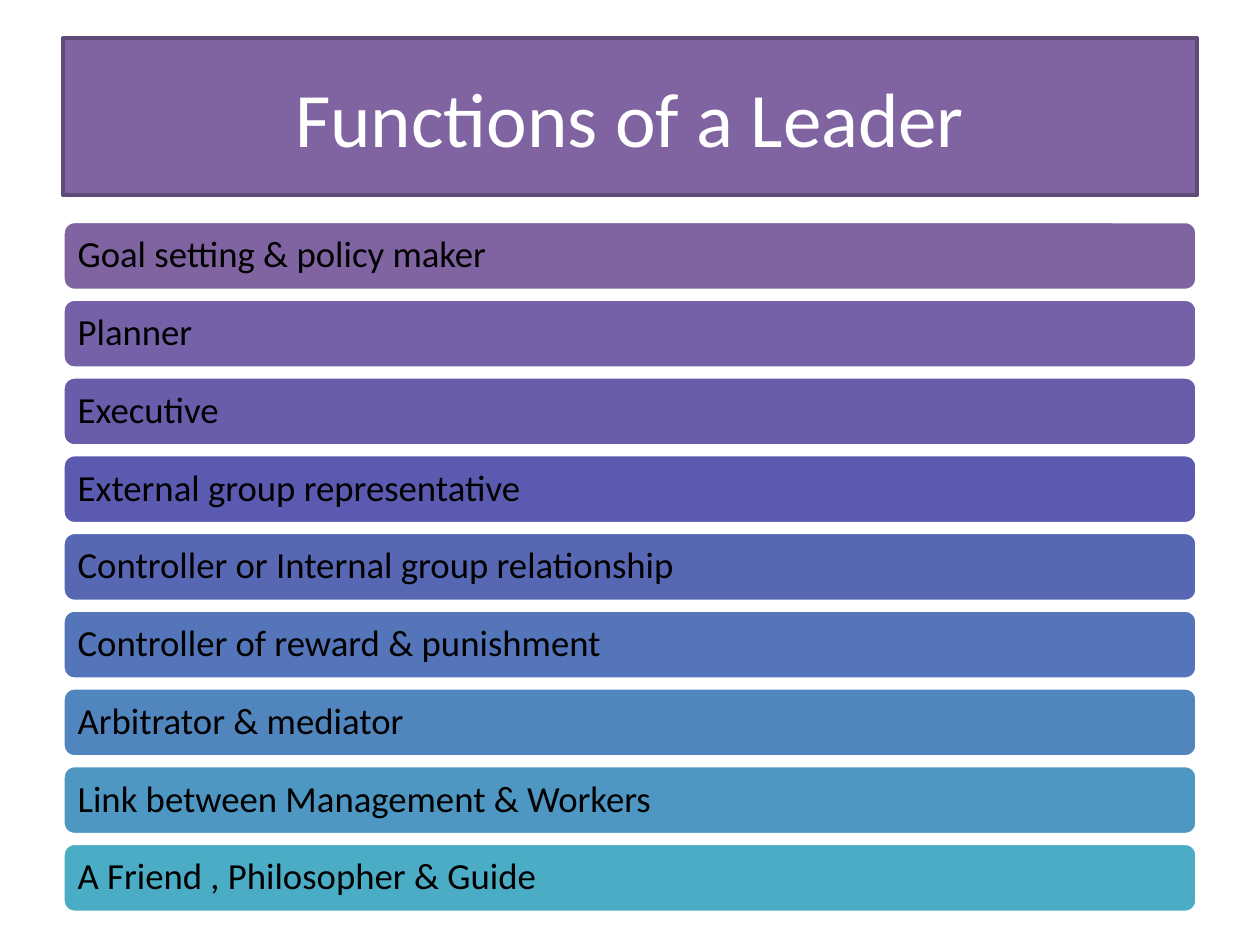
from pptx import Presentation
from pptx.dml.color import RGBColor
from pptx.enum.shapes import MSO_SHAPE
from pptx.enum.text import MSO_ANCHOR, PP_ALIGN
from pptx.util import Pt

RECT = MSO_SHAPE.RECTANGLE
ROUNDED = MSO_SHAPE.ROUNDED_RECTANGLE
MIDDLE = MSO_ANCHOR.MIDDLE
CENTER = PP_ALIGN.CENTER
JUSTIFY = PP_ALIGN.JUSTIFY

LEFT, WIDTH = 36, 648
FIRST_TOP, BAR_PITCH, BAR_HEIGHT = 126.6, 44.42, 39.4

# Each function of a leader with its bar colour
FUNCTIONS = [
    ("Goal setting & policy maker", "8064A2"),
    ("Planner", "7561A7"),
    ("Executive", "685DAB"),
    ("External group representative", "5A5BB0"),
    ("Controller or Internal group relationship", "5767B4"),
    ("Controller of reward & punishment", "5475B9"),
    ("Arbitrator & mediator", "5185BD"),
    ("Link between Management & Workers", "4E97C2"),
    ("A Friend , Philosopher & Guide", "4BACC6"),
]

TITLE_FONT = {"name": "Calibri", "size": Pt(44)}
BAR_FONT = {"name": "Calibri", "size": Pt(21)}
TITLE_PARAGRAPH = {"alignment": CENTER}
BAR_PARAGRAPH = {"alignment": JUSTIFY, "line_spacing": 0.9}
TITLE_FRAME = {"word_wrap": True, "vertical_anchor": MIDDLE}
BAR_FRAME = TITLE_FRAME | {
    f"margin_{side}": Pt(6.5) for side in ("left", "top", "right", "bottom")
}


def rgb(hex_colour):
    return RGBColor.from_string(hex_colour)


def apply(target, values):
    for name, value in values.items():
        setattr(target, name, value)


def add_panel(slide, geometry, top, height, fill, outline):
    panel = slide.shapes.add_shape(geometry, Pt(LEFT), Pt(top), Pt(WIDTH), Pt(height))
    panel.shadow.inherit = False
    panel.fill.solid()
    panel.fill.fore_color.rgb = rgb(fill)
    panel.line.color.rgb = rgb(outline)
    panel.line.width = Pt(2)
    return panel


def write_label(panel, label, colour, frame_format, paragraph_format, font_format):
    frame = panel.text_frame
    apply(frame, frame_format)
    paragraph = frame.paragraphs[0]
    apply(paragraph, paragraph_format)
    run = paragraph.add_run()
    run.text = label
    apply(run.font, font_format)
    run.font.color.rgb = rgb(colour)


def main():
    deck = Presentation()
    deck.slide_width, deck.slide_height = Pt(720), Pt(540)
    slide = deck.slides.add_slide(deck.slide_layouts[6])

    # Title banner
    banner = add_panel(slide, RECT, 21.6, 90, "8064A2", "5F4A78")
    write_label(banner, "Functions of a Leader", "FFFFFF",
                TITLE_FRAME, TITLE_PARAGRAPH, TITLE_FONT)

    # One bar per function
    for index, (function, fill) in enumerate(FUNCTIONS):
        top = FIRST_TOP + index * BAR_PITCH
        bar = add_panel(slide, ROUNDED, top, BAR_HEIGHT, fill, "FFFFFF")
        write_label(bar, function, "000000", BAR_FRAME, BAR_PARAGRAPH, BAR_FONT)

    deck.save("out.pptx")


if __name__ == "__main__":
    main()
